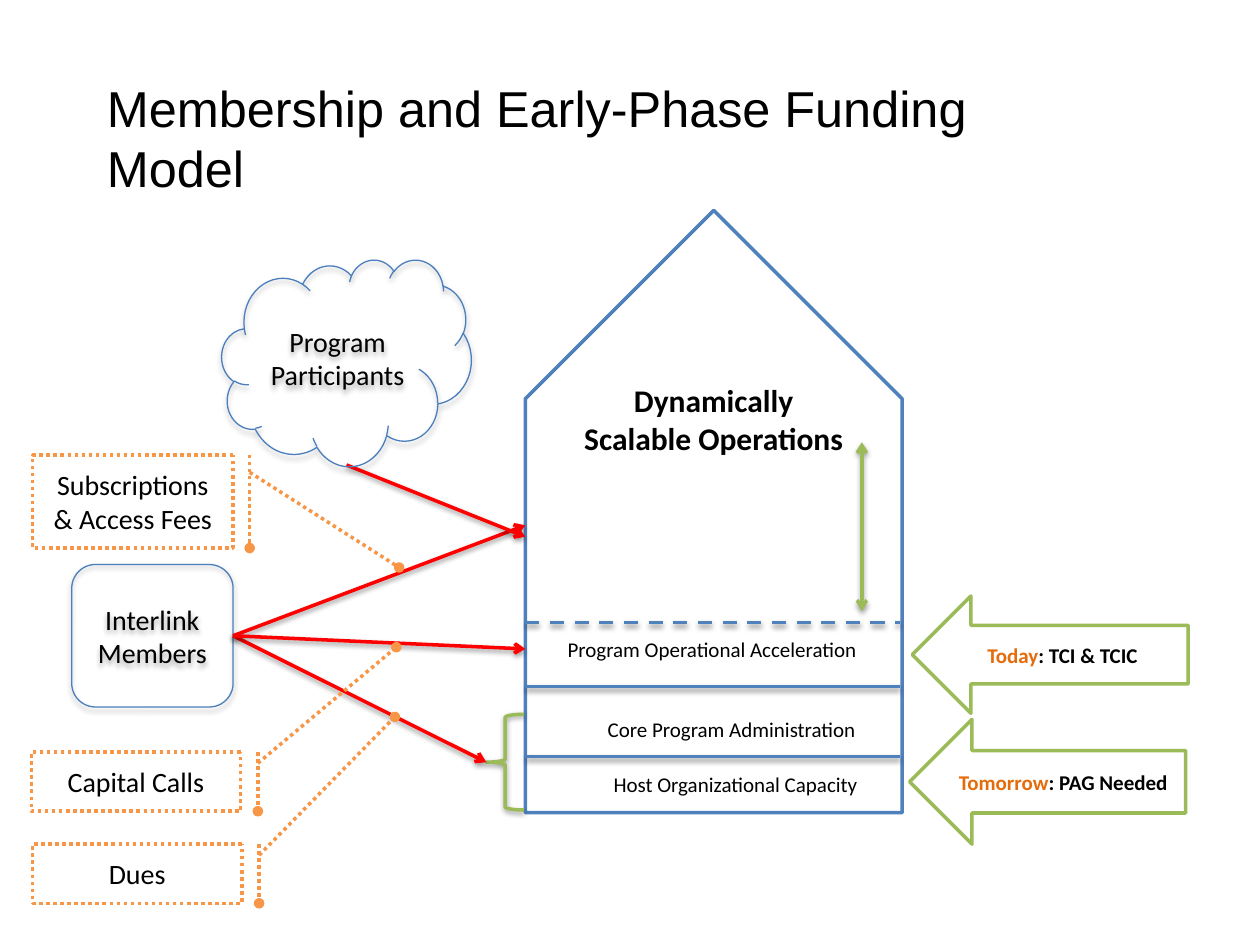
from lxml.etree import SubElement
from pptx import Presentation
from pptx.dml.color import RGBColor
from pptx.enum.dml import MSO_LINE_DASH_STYLE as Dash
from pptx.enum.shapes import MSO_CONNECTOR as Connector, MSO_SHAPE as Shape
from pptx.enum.text import MSO_ANCHOR as Anchor, PP_ALIGN as Align
from pptx.oxml.ns import qn
from pptx.util import Pt

COLORS = {
    "black": "000000", "white": "FFFFFF", "blue": "4F81BD", "outline": "4B7EBC",
    "green": "9BBB59", "red": "FF0000", "orange": "F79646", "accent": "E46C0A",
}
PADDING = (7.2, 3.6, 7.2, 3.6)


def color(name):
    return RGBColor.from_string(COLORS[name])


class Diagram:
    font = "Calibri"
    weight = 2

    def __init__(self, slide):
        self.slide = slide

    def label(self, sp, text, size, bold=False, align=Align.CENTER,
              anchor=Anchor.MIDDLE, insets=PADDING, wrap=True, font=None):
        tf = sp.text_frame
        tf.text = text
        tf.word_wrap = wrap
        tf.vertical_anchor = anchor
        tf.margin_left, tf.margin_top, tf.margin_right, tf.margin_bottom = map(Pt, insets)
        for p in tf.paragraphs:
            p.alignment = align
            for r in p.runs:
                r.font.name = font or self.font
                r.font.size = Pt(size)
                r.font.bold = bold
                r.font.color.rgb = color("black")

    def text(self, box, text, size, **style):
        sp = self.slide.shapes.add_textbox(*map(Pt, box))
        self.label(sp, text, size, **style)

    def shape(self, kind, box, line, fill=None, weight=None, adjust=()):
        sp = self.slide.shapes.add_shape(kind, *map(Pt, box))
        sp.shadow.inherit = False
        for i, value in enumerate(adjust):
            sp.adjustments[i] = value
        if fill:
            sp.fill.solid()
            sp.fill.fore_color.rgb = color(fill)
        else:
            sp.fill.background()
        sp.line.color.rgb = color(line)
        sp.line.width = Pt(weight or self.weight)
        return sp

    def line_end(self, sp, end, kind):
        ln = sp._element.spPr.find(qn("a:ln"))
        SubElement(ln, qn(f"a:{end}End"), type=kind)

    def shadow(self, sp, alpha, distance):
        props = sp._element.spPr
        effects = props.find(qn("a:effectLst"))
        if effects is None:
            effects = SubElement(props, qn("a:effectLst"))
        outer = SubElement(effects, qn("a:outerShdw"), blurRad=str(int(Pt(3.1))),
                           dist=str(int(Pt(distance))), dir="5400000", rotWithShape="0")
        tone = SubElement(outer, qn("a:srgbClr"), val=COLORS["black"])
        SubElement(tone, qn("a:alpha"), val=str(alpha * 1000))

    def node(self, kind, box, text):
        sp = self.shape(kind, box, "outline", weight=0.75)
        self.shadow(sp, 35, 1.8)
        self.label(sp, text, 16)
        return sp

    def callout(self, box, text, end_y, end_x):
        sp = self.shape(Shape.LINE_CALLOUT_1_BORDER_AND_ACCENT_BAR, box, "orange",
                        "white", adjust=(0.188, -0.083, end_y, end_x))
        props = sp._element.spPr
        props.find(qn("a:xfrm")).set("flipH", "1")
        tone = props.find(qn("a:solidFill"))[0]
        SubElement(tone, qn("a:alpha"), val="50000")
        sp.line.dash_style = Dash.ROUND_DOT
        self.line_end(sp, "tail", "oval")
        self.label(sp, text, 16, insets=(7.2,) * 4)

    def source(self, box, period, detail):
        sp = self.shape(Shape.LEFT_ARROW, box, "green", "white")
        self.label(sp, period, 12, bold=True)
        p = sp.text_frame.paragraphs[0]
        p.runs[0].font.color.rgb = color("accent")
        r = p.add_run()
        r.text = detail
        r.font.name = self.font
        r.font.size = Pt(12)
        r.font.bold = True
        r.font.color.rgb = color("black")

    def line(self, start, end, tone, heads=(), dash=None, begin=None, finish=None):
        sp = self.slide.shapes.add_connector(Connector.STRAIGHT, *map(Pt, start + end))
        if begin:
            sp.begin_connect(*begin)
        if finish:
            sp.end_connect(*finish)
        sp.line.color.rgb = color(tone)
        sp.line.width = Pt(self.weight)
        if dash:
            sp.line.dash_style = dash
        for head in heads:
            self.line_end(sp, head, "arrow")
        self.shadow(sp, 38, 1.6)


def main():
    prs = Presentation()
    prs.slide_width, prs.slide_height = Pt(720), Pt(540)
    d = Diagram(prs.slides.add_slide(prs.slide_layouts[6]))

    d.text((54, 40.3, 581.8, 57.6), "Membership and Early-Phase Funding Model", 28.8,
           align=Align.LEFT, anchor=Anchor.TOP, font="Arial")

    left, right = 300.2, 514.1
    members = d.node(Shape.ROUNDED_RECTANGLE, (41, 322.6, 92.2, 81.4), "Interlink\nMembers")
    house = d.shape(Shape.SNIP_2_SAME_RECTANGLE, (left, 120.2, 215.3, 344.2),
                    "blue", "white", adjust=(0.5, 0))
    d.label(house, "Dynamically\nScalable Operations", 18, bold=True,
            anchor=Anchor.TOP, insets=(0, 44, 0, 0), wrap=False)

    for y, dash in ((432.4, None), (392.4, None), (355.7, Dash.DASH)):
        d.line((left, y), (right, y), "blue", dash=dash)
    inset = dict(anchor=Anchor.BOTTOM, insets=(27.4, 2.9, 5, 4.3))
    for x, y, text, style in (
        (302.4, 437.8, "Host Organizational Capacity", inset),
        (left, 406.8, "Core Program Administration", inset),
        (left, 360, "Program Operational Acceleration", dict(anchor=Anchor.TOP)),
    ):
        d.text((x, y, 213.5, 21.6), text, 12, **style)
    d.line((492.5, 252.7), (492.5, 349.2), "green", heads=("head", "tail"))

    brace = d.shape(Shape.LEFT_BRACE, (277.9, 408.2, 21.6, 54.7), "green")
    d.shadow(brace, 38, 1.6)
    exit_point = (133.2, 363.3)
    for end, finish in (((277.9, 435.6), (brace, 1)), ((left, 300.2), None),
                        ((left, 370.8), None)):
        d.line(exit_point, end, "red", heads=("tail",), begin=(members, 3), finish=finish)
    d.line((198, 265.7), (left, 306.7), "red", heads=("tail",))

    for box, text, end_y, end_x in (
        ((18.7, 259.9, 114.5, 53.3), "Subscriptions\n& Access Fees", 1.209, -0.829),
        ((18.7, 482.4, 119.5, 33.8), "Dues", -2.153, -0.732),
        ((18, 429.8, 119.5, 33.8), "Capital Calls", -1.774, -0.745),
    ):
        d.callout(box, text, end_y, end_x)

    d.source((521.3, 340.6, 157.7, 67), "Today", ": TCI & TCIC ")
    d.source((519.8, 411.1, 157.7, 71.3), "Tomorrow", ": PAG Needed")
    d.node(Shape.CLOUD, (126.7, 148.3, 142.6, 118.1), "Program\nParticipants")

    prs.save("out.pptx")


if __name__ == "__main__":
    main()
